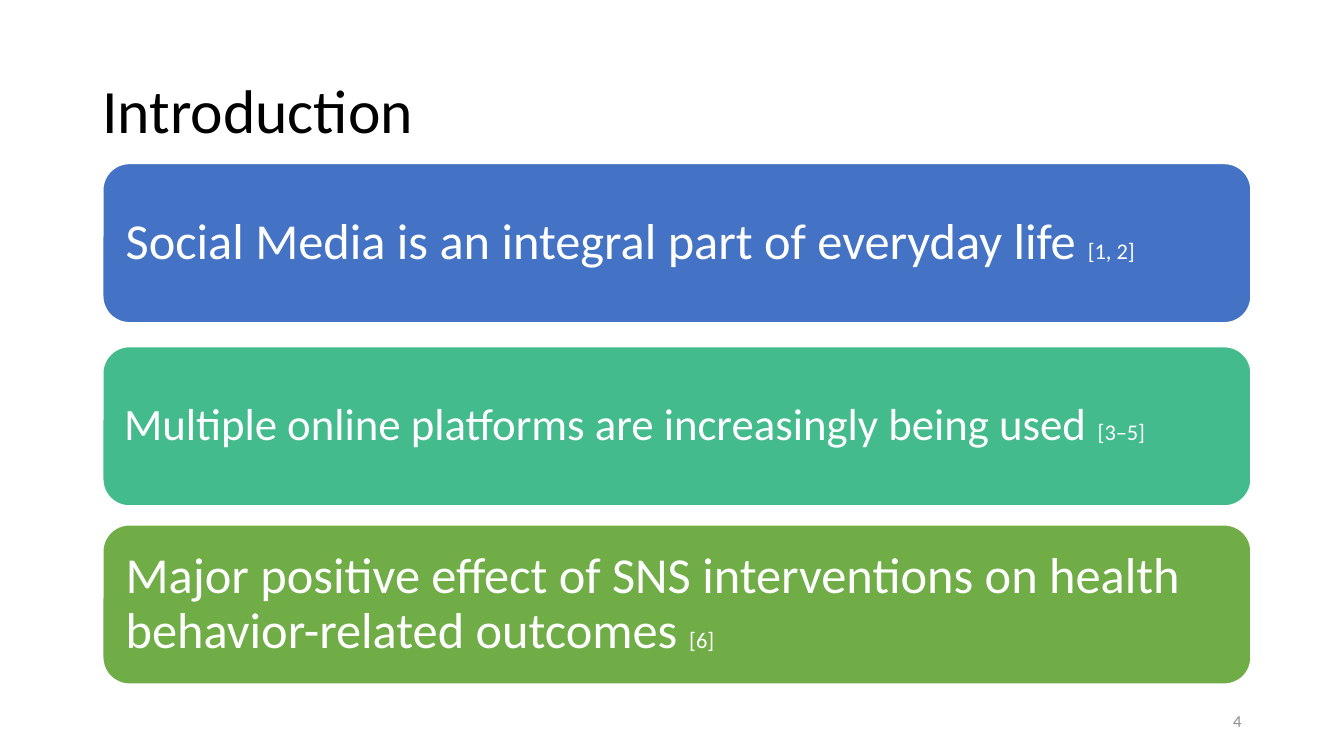
from dataclasses import dataclass

from pptx import Presentation
from pptx.dml.color import RGBColor
from pptx.enum.shapes import MSO_SHAPE
from pptx.enum.text import MSO_ANCHOR, PP_ALIGN
from pptx.util import Pt


@dataclass(frozen=True)
class Theme:
    font: str = "Calibri"
    black: str = "000000"
    white: str = "FFFFFF"
    grey: str = "8C8C8C"
    blue: str = "4472C4"
    teal: str = "43BB8D"
    green: str = "70AD47"
    title_size: int = 44
    large_size: int = 36
    medium_size: int = 32
    citation_size: int = 16
    number_size: int = 12


THEME = Theme()

# Statement bars share these measures
BAR_LEFT, BAR_WIDTH, BAR_HEIGHT = 73.44, 820.08, 113.76


def format_run(run, size, color):
    run.font.name = THEME.font
    run.font.size = Pt(size)
    run.font.color.rgb = RGBColor.from_string(color)


def add_title(slide, text):
    title = slide.shapes.title
    title.left, title.top, title.width, title.height = Pt(66), Pt(28.8), Pt(828), Pt(104.4)
    title.text_frame.text = text
    title.text_frame.vertical_anchor = MSO_ANCHOR.MIDDLE
    paragraph = title.text_frame.paragraphs[0]
    paragraph.alignment = PP_ALIGN.LEFT
    paragraph.line_spacing = 0.9
    format_run(paragraph.runs[0], THEME.title_size, THEME.black)


def add_statement_bar(slide, top, fill, statement, citation, size, inset):
    bar = slide.shapes.add_shape(
        MSO_SHAPE.ROUNDED_RECTANGLE, Pt(BAR_LEFT), Pt(top), Pt(BAR_WIDTH), Pt(BAR_HEIGHT))
    bar.shadow.inherit = False
    bar.fill.solid()
    bar.fill.fore_color.rgb = RGBColor.from_string(fill)
    bar.line.color.rgb = RGBColor.from_string(THEME.white)
    bar.line.width = Pt(1)

    frame = bar.text_frame
    frame.word_wrap = True
    frame.vertical_anchor = MSO_ANCHOR.MIDDLE
    frame.margin_left = frame.margin_right = Pt(inset)
    frame.margin_top = frame.margin_bottom = Pt(inset)
    frame.text = statement + " "
    paragraph = frame.paragraphs[0]
    paragraph.alignment = PP_ALIGN.LEFT
    paragraph.line_spacing = 0.9
    format_run(paragraph.runs[0], size, THEME.white)
    citation_run = paragraph.add_run()
    citation_run.text = citation
    format_run(citation_run, THEME.citation_size, THEME.white)


def add_slide_number(slide, number):
    box = slide.shapes.add_textbox(Pt(678), Pt(500.5), Pt(216), Pt(28.75))
    frame = box.text_frame
    frame.word_wrap = True
    frame.vertical_anchor = MSO_ANCHOR.MIDDLE
    frame.text = number
    paragraph = frame.paragraphs[0]
    paragraph.alignment = PP_ALIGN.RIGHT
    format_run(paragraph.runs[0], THEME.number_size, THEME.grey)


def main():
    presentation = Presentation()
    presentation.slide_width, presentation.slide_height = Pt(960), Pt(540)
    slide = presentation.slides.add_slide(presentation.slide_layouts.get_by_name("Title Only"))

    add_title(slide, "Introduction")

    # Statements: top, fill, text, citation, type size, inset
    statements = [
        (116.8, THEME.blue, "Social Media is an integral part of everyday life",
         "[1, 2]", THEME.large_size, 10.8),
        (247.6, THEME.teal, "Multiple online platforms are increasingly being used",
         "[3–5]", THEME.medium_size, 9.6),
        (374.9, THEME.green,
         "Major positive effect of SNS interventions on health behavior-related outcomes",
         "[6]", THEME.large_size, 10.8),
    ]
    for statement in statements:
        add_statement_bar(slide, *statement)

    add_slide_number(slide, "4")
    presentation.save("out.pptx")


if __name__ == "__main__":
    main()
